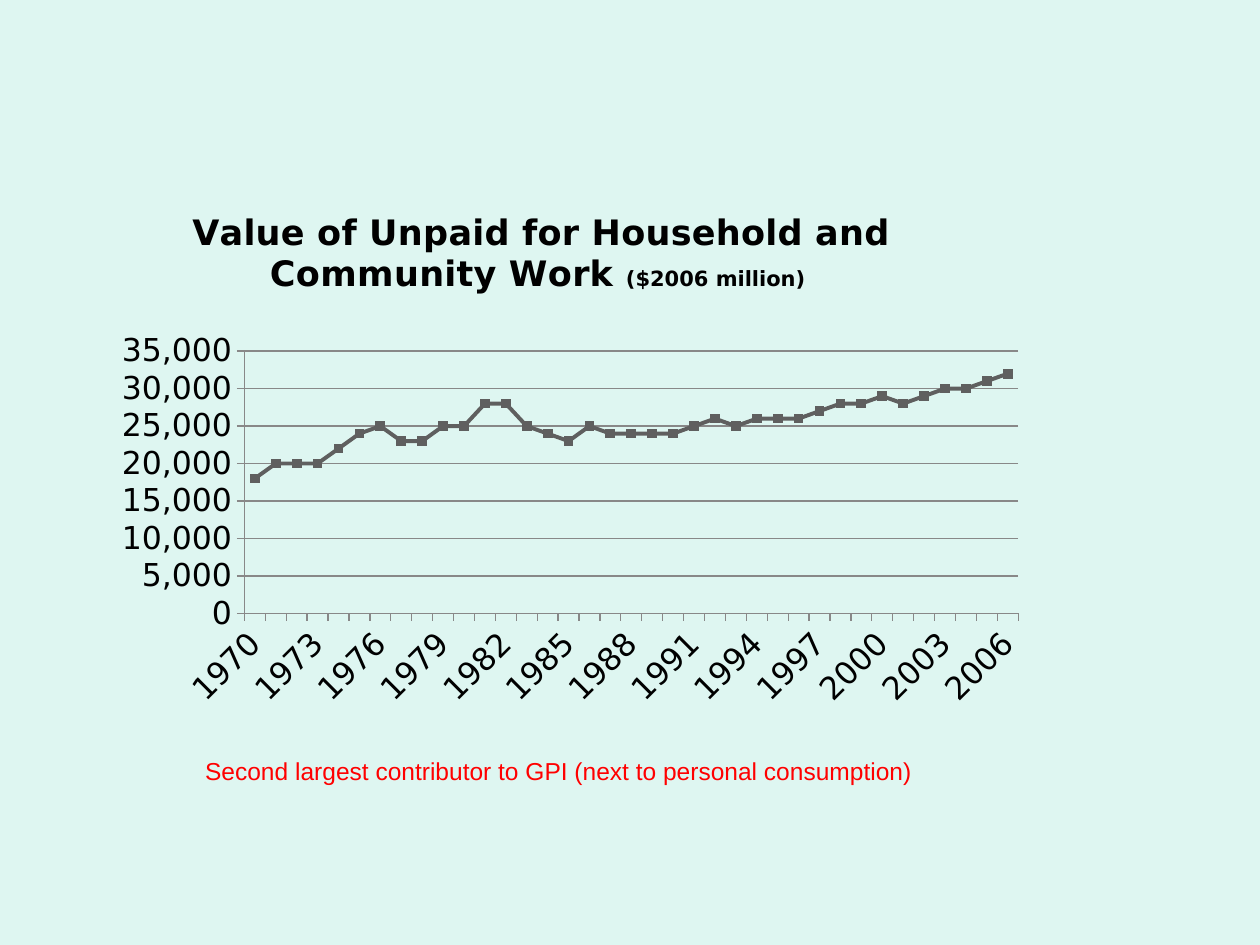
"""Build a slide charting the value of unpaid household and community work."""
from lxml import etree
from pptx import Presentation
from pptx.chart.data import CategoryChartData
from pptx.dml.color import RGBColor
from pptx.enum import chart as ch, text
from pptx.oxml.ns import qn
from pptx.util import Inches, Pt

MINT = RGBColor(0xDE, 0xF6, 0xF1)
BLACK = RGBColor(0, 0, 0)
RED = RGBColor(0xFF, 0, 0)
GREY = RGBColor(0x88, 0x88, 0x88)
DARK_GREY = RGBColor(0x5F, 0x5F, 0x5F)
YEARS = [str(year) for year in range(1970, 2007)]
THOUSANDS = [
    18, 20, 20, 20, 22, 24, 25, 23, 23, 25,
    25, 28, 28, 25, 24, 23, 25, 24, 24, 24,
    24, 25, 26, 25, 26, 26, 26, 27, 28, 28,
    29, 28, 29, 30, 30, 31, 32,
]


def place(element, index, **fractions):
    """Give a chart part a manual layout in fractions of the chart."""
    for old in element.findall(qn("c:layout")):
        element.remove(old)
    layout = etree.Element(qn("c:layout"))
    manual = etree.SubElement(layout, qn("c:manualLayout"))
    if "w" in fractions:
        etree.SubElement(manual, qn("c:layoutTarget"), val="inner")
    for side in ("x", "y"):
        etree.SubElement(manual, qn(f"c:{side}Mode"), val="edge")
    for name, value in fractions.items():
        etree.SubElement(manual, qn(f"c:{name}"), val=str(value))
    element.insert(index, layout)


deck = Presentation()
deck.slide_width, deck.slide_height = Inches(10), Inches(7.5)
page = deck.slides.add_slide(deck.slide_layouts[6])
page.background.fill.solid()
page.background.fill.fore_color.rgb = MINT

data = CategoryChartData(number_format="#,##0")
data.categories = YEARS
data.add_series("Series 1", [value * 1000 for value in THOUSANDS])
chart = page.shapes.add_chart(
    ch.XL_CHART_TYPE.LINE_MARKERS,
    Inches(0.83), Inches(1.47), Inches(7.4), Inches(4.25), data,
).chart
chart.has_legend = False
chart.font.name, chart.font.size = "DejaVu Sans", Pt(18)
chart.font.color.rgb = BLACK
chart.plots[0].vary_by_categories = False

chart.has_title = True
para = chart.chart_title.text_frame.paragraphs[0]
for words, size in (
    ("Value of Unpaid for Household and Community Work ", 20),
    ("($2006 million) ", 12),
):
    span = para.add_run()
    span.text = words
    span.font.name, span.font.size, span.font.bold = "DejaVu Sans", Pt(size), True
    span.font.color.rgb = BLACK
chart.chart_title.include_in_layout = False
place(chart.chart_title._element, 1, x=0.09, y=0.04)
place(chart._chartSpace.chart.plotArea, 0, x=0.15, y=0.31, w=0.83, h=0.49)

series = chart.plots[0].series[0]
series.smooth = False
series.format.line.color.rgb = DARK_GREY
series.format.line.width = Pt(2.25)
series.marker.style = ch.XL_MARKER_STYLE.SQUARE
series.marker.size = 5
series.marker.format.fill.solid()
series.marker.format.fill.fore_color.rgb = DARK_GREY
series.marker.format.line.color.rgb = DARK_GREY

years, amounts = chart.category_axis, chart.value_axis
for axis in (years, amounts):
    axis.major_tick_mark = ch.XL_TICK_MARK.OUTSIDE
    axis.minor_tick_mark = ch.XL_TICK_MARK.NONE
    axis.format.line.color.rgb = GREY
    axis.tick_labels.font.size = Pt(18)
amounts.minimum_scale, amounts.maximum_scale = 0, 35000
amounts.major_unit = 5000
amounts.has_major_gridlines = True
amounts.major_gridlines.format.line.color.rgb = GREY
amounts.tick_labels.number_format = "#,##0"
amounts.tick_labels.number_format_is_linked = False
years._element.find(qn("c:txPr")).find(qn("a:bodyPr")).set("rot", "-2700000")
label_skip = etree.Element(qn("c:tickLblSkip"), val="3")
years._element.find(qn("c:noMultiLvlLbl")).addprevious(label_skip)

box = page.shapes.add_textbox(Inches(1.53), Inches(5.95), Inches(5.84), Inches(0.34))
box.text_frame.word_wrap = False
box.text_frame.auto_size = text.MSO_AUTO_SIZE.SHAPE_TO_FIT_TEXT
para = box.text_frame.paragraphs[0]
para.text = "Second largest contributor to GPI (next to personal consumption)"
para.font.name, para.font.size = "Arial", Pt(14)
para.font.color.rgb = RED

deck.save("out.pptx")
